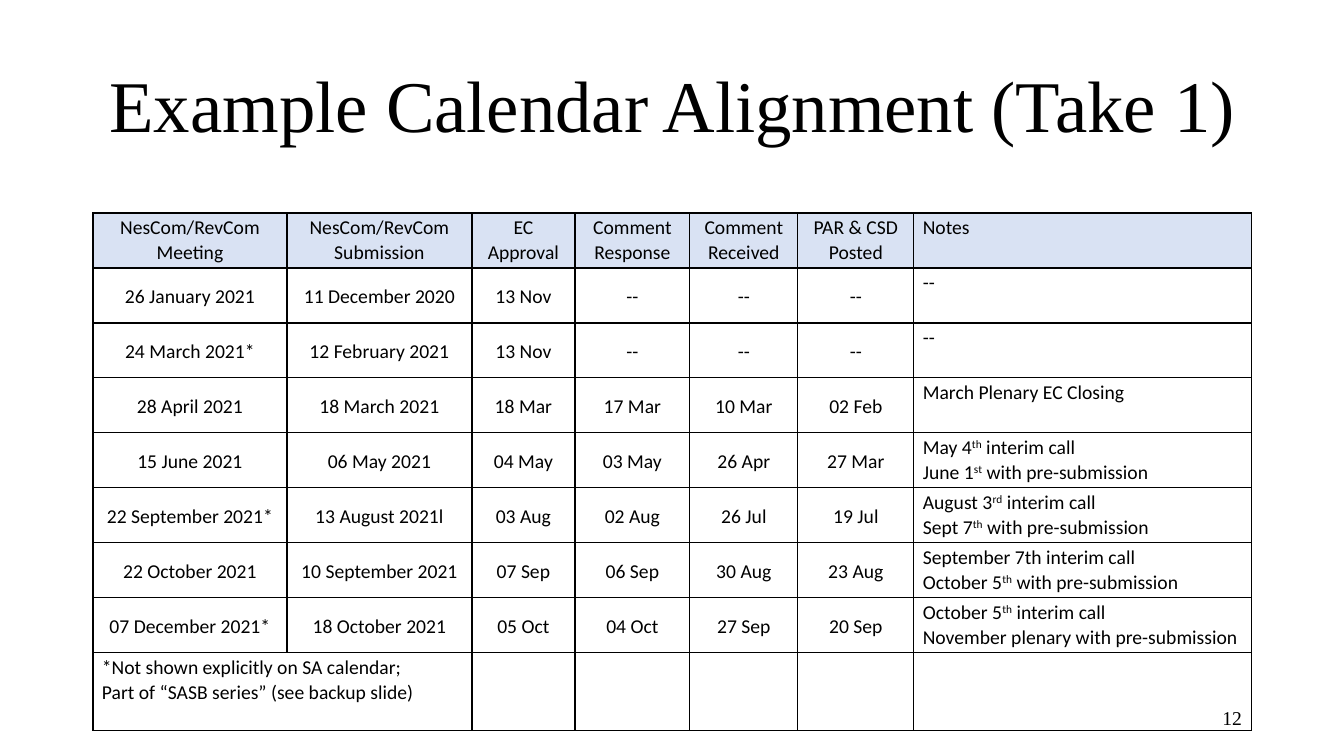
from lxml import etree
from pptx import Presentation
from pptx.dml.color import RGBColor
from pptx.enum import text
from pptx.oxml.ns import qn
from pptx.util import Emu, Pt

BLACK = RGBColor(0x00, 0x00, 0x00)
HEADER_BLUE = RGBColor(0xD9, 0xE2, 0xF3)
SERIF, SANS = "Times New Roman", "Calibri"
LEFT, CENTER, RIGHT = text.PP_ALIGN.LEFT, text.PP_ALIGN.CENTER, text.PP_ALIGN.RIGHT
TOP, MIDDLE = text.MSO_ANCHOR.TOP, text.MSO_ANCHOR.MIDDLE

# Content: "\n" parts paragraphs, "^" switches superscript on and off
TITLE = "Example Calendar Alignment (Take 1)"
PAGE = "12"
HEADERS = ("NesCom/RevCom\nMeeting", "NesCom/RevCom Submission", "EC Approval",
           "Comment Response", "Comment Received", "PAR & CSD Posted", "Notes")
MEETINGS = [
    ("26 January 2021", "11 December 2020", "13 Nov", "--", "--", "--", "--"),
    ("24 March 2021*", "12 February 2021", "13 Nov", "--", "--", "--", "--"),
    ("28 April 2021", "18 March 2021", "18 Mar", "17 Mar", "10 Mar", "02 Feb",
     "March Plenary EC Closing"),
    ("15 June 2021", "06 May 2021", "04 May", "03 May", "26 Apr", "27 Mar",
     "May 4^th^ interim call\nJune 1^st^ with pre-submission"),
    ("22 September 2021*", "13 August 2021l", "03 Aug", "02 Aug", "26 Jul", "19 Jul",
     "August 3^rd^ interim call\nSept 7^th^ with pre-submission"),
    ("22 October 2021", "10 September 2021", "07 Sep", "06 Sep", "30 Aug", "23 Aug",
     "September 7th interim call\nOctober 5^th^ with pre-submission"),
    ("07 December 2021*", "18 October 2021", "05 Oct", "04 Oct", "27 Sep", "20 Sep",
     "October 5^th^ interim call\nNovember plenary with pre-submission"),
]
FOOTNOTE = "*Not shown explicitly on SA calendar;\nPart of “SASB series” (see backup slide)"

# Layout in px
SLIDE_W, SLIDE_H = 1344, 756
TITLE_BOX = (93, 20, 1159, 166)
PAGE_BOX = (950, 701, 302, 40)
TABLE_LEFT, TABLE_TOP = 93, 213
COLUMN_WIDTHS = (194, 185, 103, 115, 108, 116, 338)
ROW_HEIGHT, FOOTNOTE_HEIGHT = 55, 78
CELL_SIDE, CELL_TOP = 9, 1


def px(length):
    return Emu(round(length * 914400 / 100.8))


def write(frame, words, font, size, align, spacing=None):
    for i, line in enumerate(words.split("\n")):
        paragraph = frame.paragraphs[0] if i == 0 else frame.add_paragraph()
        paragraph.alignment = align
        paragraph.line_spacing = spacing
        paragraph.font.name, paragraph.font.size = font, Pt(size)
        paragraph.font.color.rgb = BLACK
        for j, part in enumerate(line.split("^")):
            run = paragraph.add_run()
            run.text = part
            if j % 2:
                run._r.get_or_add_rPr().set("baseline", "30000")


def add_text(slide, box, words, size, align, anchor):
    frame = slide.shapes.add_textbox(*map(px, box)).text_frame
    frame.word_wrap = True
    frame.vertical_anchor = anchor
    write(frame, words, SERIF, size, align)
    return frame


def add_borders(cell):
    properties = cell._tc.get_or_add_tcPr()
    for i, side in enumerate(("lnL", "lnR", "lnT", "lnB")):
        line = etree.Element(qn("a:" + side), w=str(Pt(1)))
        fill = etree.SubElement(line, qn("a:solidFill"))
        etree.SubElement(fill, qn("a:srgbClr"), val=str(BLACK))
        properties.insert(i, line)


deck = Presentation()
deck.slide_width, deck.slide_height = px(SLIDE_W), px(SLIDE_H)
slide = deck.slides.add_slide(deck.slide_layouts[6])

# Title and page number
add_text(slide, TITLE_BOX, TITLE, 52, CENTER, MIDDLE)
page = add_text(slide, PAGE_BOX, PAGE, 14, RIGHT, TOP)
page.paragraphs[0].space_after = Pt(6)

# Calendar table
notes_column = len(HEADERS) - 1
footnote_row = (FOOTNOTE,) + ("",) * notes_column
rows = [HEADERS, *MEETINGS, footnote_row]
heights = [ROW_HEIGHT] * (len(rows) - 1) + [FOOTNOTE_HEIGHT]
calendar = slide.shapes.add_table(
    len(rows), len(HEADERS), px(TABLE_LEFT), px(TABLE_TOP),
    px(sum(COLUMN_WIDTHS)), px(sum(heights))).table
calendar.first_row = calendar.horz_banding = False
for column, width in zip(calendar.columns, COLUMN_WIDTHS):
    column.width = px(width)

last = len(rows) - 1
for r, (row, height) in enumerate(zip(rows, heights)):
    calendar.rows[r].height = px(height)
    for c, words in enumerate(row):
        cell = calendar.cell(r, c)
        cell.margin_left = cell.margin_right = px(CELL_SIDE)
        cell.margin_top, cell.margin_bottom = px(CELL_TOP), 0
        is_date = 0 < r < last and c < notes_column
        cell.vertical_anchor = MIDDLE if is_date else TOP
        align = LEFT if c == notes_column or r == last else CENTER
        if words:
            write(cell.text_frame, words, SANS, 14, align, 1.07)
        add_borders(cell)
        if r == 0:
            cell.fill.solid()
            cell.fill.fore_color.rgb = HEADER_BLUE
        else:
            cell.fill.background()
calendar.cell(last, 0).merge(calendar.cell(last, 1))

deck.save("out.pptx")
